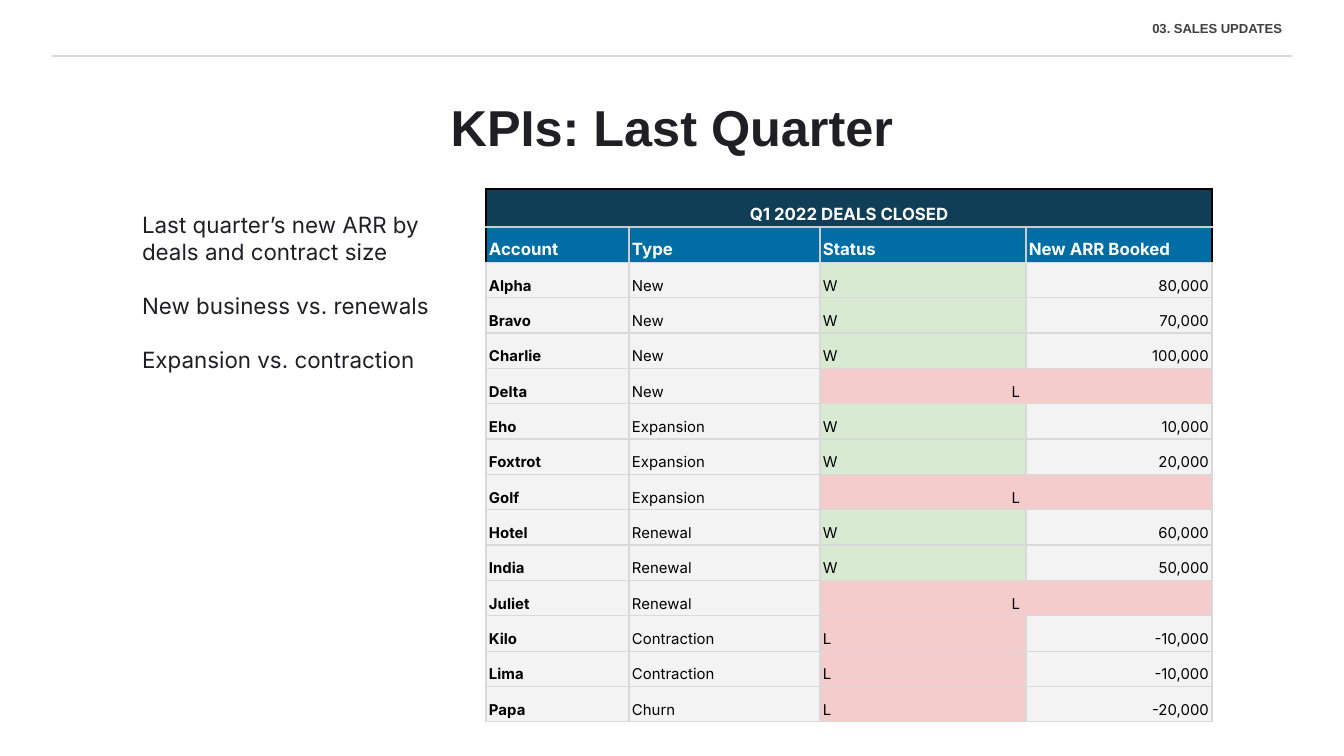
from lxml import etree
from pptx import Presentation
from pptx.dml.color import RGBColor
from pptx.enum.shapes import MSO_CONNECTOR
from pptx.enum.text import MSO_ANCHOR, PP_ALIGN
from pptx.oxml.ns import qn
from pptx.util import Pt

LEFT, CENTER, RIGHT = PP_ALIGN.LEFT, PP_ALIGN.CENTER, PP_ALIGN.RIGHT
TOP, BOTTOM = MSO_ANCHOR.TOP, MSO_ANCHOR.BOTTOM
STRAIGHT = MSO_CONNECTOR.STRAIGHT

BLACK = RGBColor(0x00, 0x00, 0x00)
WHITE = RGBColor(0xFF, 0xFF, 0xFF)
INK = RGBColor(0x1F, 0x1F, 0x24)
GRAY = RGBColor(0x3F, 0x3F, 0x3F)
RULE = RGBColor(0xD8, 0xD8, 0xD8)
GRID = RGBColor(0xD9, 0xD9, 0xD9)
HEAD_GRID = RGBColor(0xCC, 0xCC, 0xCC)
NAVY = RGBColor(0x0F, 0x3E, 0x56)
BLUE = RGBColor(0x00, 0x6E, 0xA5)
PALE = RGBColor(0xF3, 0xF3, 0xF3)
STATUS_FILL = {"W": RGBColor(0xD9, 0xEA, 0xD3), "L": RGBColor(0xF4, 0xCC, 0xCC)}

SECTION = "03. SALES UPDATES"
TITLE = "KPIs: Last Quarter"
NOTES = [
    "Last quarter’s new ARR by deals and contract size",
    "New business vs. renewals",
    "Expansion vs. contraction",
]
TABLE_TITLE = "Q1 2022 DEALS CLOSED"
HEADERS = ["Account", "Type", "Status", "New ARR Booked"]
DEALS = [
    ("Alpha", "New", "W", "80,000"),
    ("Bravo", "New", "W", "70,000"),
    ("Charlie", "New", "W", "100,000"),
    ("Delta", "New", "L", ""),
    ("Eho", "Expansion", "W", "10,000"),
    ("Foxtrot", "Expansion", "W", "20,000"),
    ("Golf", "Expansion", "L", ""),
    ("Hotel", "Renewal", "W", "60,000"),
    ("India", "Renewal", "W", "50,000"),
    ("Juliet", "Renewal", "L", ""),
    ("Kilo", "Contraction", "L", "-10,000"),
    ("Lima", "Contraction", "L", "-10,000"),
    ("Papa", "Churn", "L", "-20,000"),
]
COLUMN_WIDTHS = [143, 191, 206, 186]
TABLE_LEFT, TABLE_TOP, TABLE_HEIGHT, TITLE_ROW = 486, 189, 533, 38
CELL_INSET, BOX_INSET = 3, 13


def px(length):
    """Turn slide pixels into EMU."""
    return round(length * 914400 / 134.4)


def set_margins(target, inset):
    """Give all four sides the same inset."""
    target.margin_left = target.margin_right = px(inset)
    target.margin_top = target.margin_bottom = px(inset)


def add_span(para, text, font, size, color, bold=False):
    """Add one formatted run to a paragraph."""
    span = para.add_run()
    span.text = text
    span.font.name, span.font.size, span.font.bold = font, Pt(size), bold
    span.font.color.rgb = color


def add_text(page, area, lines, font, size, color, bold=False, align=LEFT,
             anchor=TOP, spacing=None, gap=0):
    """Add a text box with one paragraph per line."""
    box = page.shapes.add_textbox(*map(px, area))
    frame = box.text_frame
    frame.word_wrap = True
    frame.vertical_anchor = anchor
    set_margins(frame, BOX_INSET)
    for index, line in enumerate(lines):
        para = frame.add_paragraph() if index else frame.paragraphs[0]
        para.alignment = align
        para.space_after = Pt(gap)
        if spacing:
            para.line_spacing = spacing
        add_span(para, line, font, size, color, bold)


def add_borders(cell, colors):
    """Draw the left, right, top and bottom borders of a cell."""
    properties = cell._tc.get_or_add_tcPr()
    for side, color in zip("LRTB", colors):
        line = etree.SubElement(properties, qn(f"a:ln{side}"), w=str(Pt(0.75)))
        fill = etree.SubElement(line, qn("a:solidFill"))
        etree.SubElement(fill, qn("a:srgbClr"), val=str(color))


def fill_cell(cell, text, fill, borders, size, color, bold, align):
    """Style a table cell and write its text."""
    add_borders(cell, borders)
    cell.fill.solid()
    cell.fill.fore_color.rgb = fill
    cell.vertical_anchor = BOTTOM
    set_margins(cell, CELL_INSET)
    para = cell.text_frame.paragraphs[0]
    para.alignment, para.line_spacing = align, 1.15
    if text:
        add_span(para, text, "Inter", size, color, bold)


def add_deals_table(page):
    """Add the table of closed deals."""
    rows, columns = len(DEALS) + 2, len(HEADERS)
    table = page.shapes.add_table(
        rows, columns, px(TABLE_LEFT), px(TABLE_TOP),
        px(sum(COLUMN_WIDTHS)), px(TABLE_HEIGHT)).table
    table.first_row = table.horz_banding = False
    for column, width in zip(table.columns, COLUMN_WIDTHS):
        column.width = px(width)
    for row in table.rows:
        row.height = px((TABLE_HEIGHT - TITLE_ROW) / (rows - 1))
    table.rows[0].height = px(TITLE_ROW)

    table.cell(0, 0).merge(table.cell(0, columns - 1))
    for column, header in enumerate(HEADERS):
        fill_cell(table.cell(0, column), "" if column else TABLE_TITLE, NAVY,
                  (BLACK, BLACK, BLACK, HEAD_GRID), 9, WHITE, True, CENTER)
        left = HEAD_GRID if column else BLACK
        right = HEAD_GRID if column < columns - 1 else BLACK
        fill_cell(table.cell(1, column), header, BLUE,
                  (left, right, HEAD_GRID, GRID), 9, WHITE, True, LEFT)

    for row, deal in enumerate(DEALS, 2):
        status, amount = deal[2:]
        if not amount:
            table.cell(row, 2).merge(table.cell(row, 3))
        fills = (PALE, PALE, STATUS_FILL[status], PALE)
        aligns = (LEFT, LEFT, LEFT if amount else CENTER, RIGHT)
        for column, (text, fill, align) in enumerate(zip(deal, fills, aligns)):
            fill_cell(table.cell(row, column), text, fill, [GRID] * 4,
                      8, BLACK, column == 0, align)


def main():
    """Build the quarterly KPI slide."""
    deck = Presentation()
    deck.slide_width, deck.slide_height = px(1344), px(756)
    page = deck.slides.add_slide(deck.slide_layouts[6])

    rule = page.shapes.add_connector(STRAIGHT, px(52), px(56), px(1292), px(56))
    rule.line.color.rgb, rule.line.width = RULE, Pt(0.75)
    etree.SubElement(rule._element.spPr, qn("a:effectLst"))

    add_text(page, (129, 198, 344, 184), NOTES, "Inter", 12, INK, gap=14.5)
    add_deals_table(page)
    add_text(page, (56, 9, 1239, 39), [SECTION], "Arial", 7, GRAY, True, RIGHT,
             spacing=1.15)
    add_text(page, (334, 81, 676, 89), [TITLE], "Arial", 27, INK, True, CENTER, BOTTOM)
    deck.save("out.pptx")


if __name__ == "__main__":
    main()
